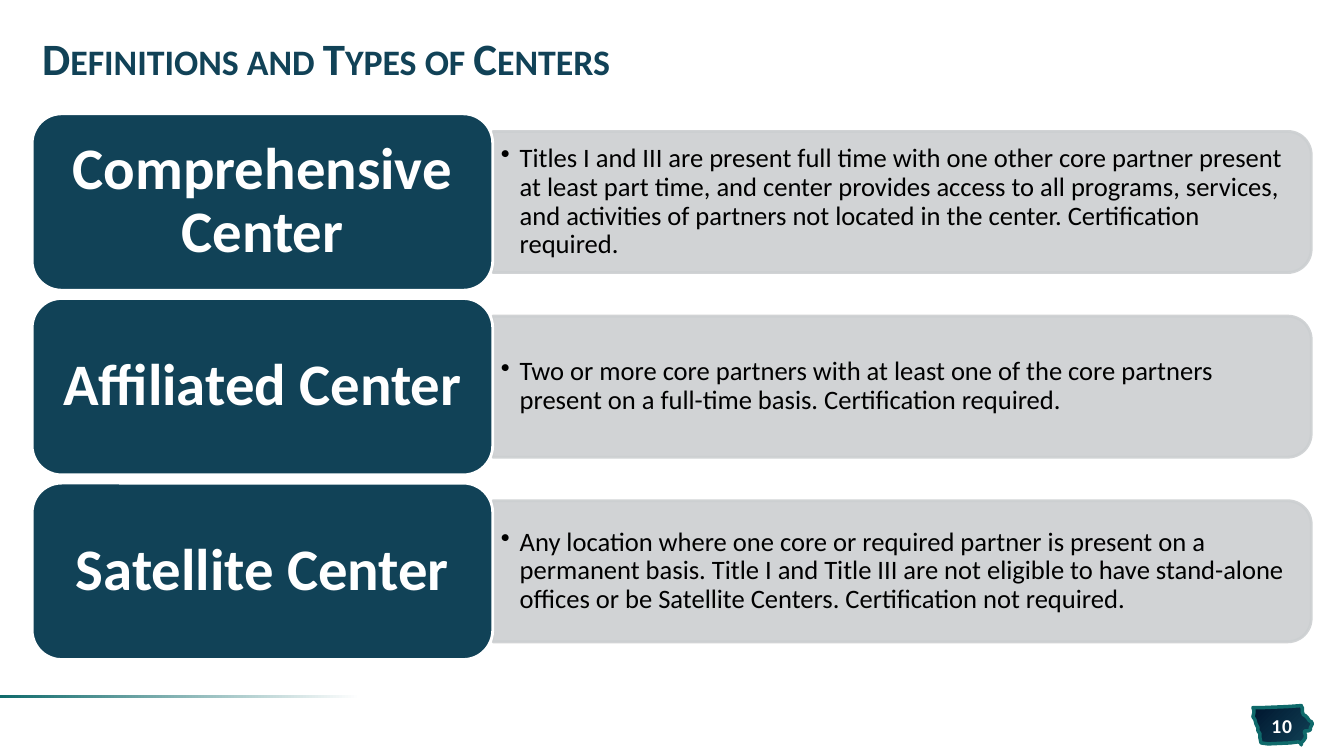
import pptx
import pptx.util
import pptx.dml.color
import pptx.enum.shapes
import pptx.enum.text
import pptx.oxml.ns
import lxml.etree

# Content
HEADING = "Definitions and Types of Centers"
PAGE_NUMBER = "10"
CENTERS = [
    ("Comprehensive Center",
     "Titles I and III are present full time with one other core partner present at least "
     "part time, and center provides access to all programs, services, and activities of "
     "partners not located in the center. Certification required."),
    ("Affiliated Center",
     "Two or more core partners with at least one of the core partners present on a "
     "full-time basis. Certification required."),
    ("Satellite Center",
     "Any location where one core or required partner is present on a permanent basis. "
     "Title I and Title III are not eligible to have stand-alone offices or be Satellite "
     "Centers. Certification not required."),
]
COLORS = {"navy": "114257", "night": "00162E", "teal": "0F6A6B", "gray": "CCCFD1",
          "white": "FFFFFF", "black": "000000"}
FONT = "Calibri"

# State outline, in hundredths of an inch
STATE = [(1291, 700), (1277, 701), (1253, 702), (1243, 702), (1244, 705), (1244, 707),
         (1243, 711), (1245, 714), (1246, 718), (1248, 722), (1248, 725), (1250, 728),
         (1250, 732), (1251, 737), (1258, 737.5), (1280, 737), (1288, 736), (1290, 737),
         (1291, 739), (1291, 737), (1293, 735), (1295, 732), (1295, 729), (1294, 726),
         (1295, 725), (1298, 725), (1300, 724), (1300, 722), (1302, 718), (1301, 716),
         (1299, 715), (1297, 712), (1295, 710), (1293, 709), (1292, 706), (1292, 702),
         (1291, 701)]

# Layout, in points
LEFT, TOP = 23, 81.3
NAME_W, NAME_H, PITCH = 329, 126, 131.9
DETAIL_W, DETAIL_H = 584.6, 100.8

Pt = pptx.util.Pt
KIND = pptx.enum.shapes.MSO_SHAPE
ALIGN = pptx.enum.text.PP_ALIGN
qn = pptx.oxml.ns.qn


def rgb(name):
    return pptx.dml.color.RGBColor.from_string(COLORS[name])


def paint(shape, fill, line=None, width=2):
    shape.shadow.inherit = False
    if isinstance(fill, str):
        shape.fill.solid()
        shape.fill.fore_color.rgb = rgb(fill)
    else:
        angle, stops = fill
        shape.fill.gradient()
        shape.fill.gradient_angle = angle
        for stop, (position, color) in zip(shape.fill.gradient_stops, stops):
            stop.position = position
            stop.color.rgb = rgb(color)
    if line:
        shape.line.color.rgb = rgb(line)
        shape.line.width = Pt(width)
    else:
        shape.line.fill.background()


def write(shape, text, size, color, bold=False, align=ALIGN.LEFT, spacing=1.0,
          insets=(7.2, 3.6), bullet=False):
    frame = shape.text_frame
    frame.word_wrap = True
    frame.vertical_anchor = pptx.enum.text.MSO_ANCHOR.MIDDLE
    frame.margin_left = frame.margin_right = Pt(insets[0])
    frame.margin_top = frame.margin_bottom = Pt(insets[1])
    paragraph = frame.paragraphs[0]
    paragraph.alignment = align
    paragraph.line_spacing = spacing
    if bullet:
        properties = paragraph._p.get_or_add_pPr()
        properties.set("marL", str(Pt(13.5)))
        properties.set("indent", str(-Pt(13.5)))
        lxml.etree.SubElement(properties, qn("a:buChar")).set("char", "•")
    run = paragraph.add_run()
    run.text = text
    run.font.name = FONT
    run.font.size = Pt(size)
    run.font.bold = bold
    run.font.color.rgb = rgb(color)
    return run._r.get_or_add_rPr()


deck = pptx.Presentation()
deck.slide_width, deck.slide_height = Pt(960), Pt(540)
slide = deck.slides.add_slide(deck.slide_layouts[6])
shapes = slide.shapes

# State badge with page number
outline = shapes.build_freeform(*STATE[0], scale=Pt(0.72))
outline.add_line_segments(STATE[1:], close=True)
paint(outline.convert_to_shape(), (315, [(0, "night"), (1, "navy")]), "teal", 2.5)
number = shapes.add_textbox(Pt(897), Pt(510), Pt(37), Pt(16.5))
write(number, PAGE_NUMBER, 14, "white", True, ALIGN.CENTER,
      insets=(0, 3.6)).set("spc", "50")

# Footer rule
rule = shapes.add_shape(KIND.RECTANGLE, Pt(0), Pt(496.5), Pt(273.6), Pt(2.2))
paint(rule, (180, [(0.06, "white"), (1, "teal")]))

# Heading
heading = shapes.add_textbox(Pt(LEFT), Pt(17.3), Pt(913.7), Pt(54))
write(heading, HEADING, 32, "navy", True, spacing=0.85).set("cap", "small")

# One row per type of center
for row, (name, definition) in enumerate(CENTERS):
    top = TOP + row * PITCH
    middle = top + NAME_H / 2
    detail_left = LEFT + NAME_W

    # The panel is turned a quarter so that its round corners face right
    panel = shapes.add_shape(
        KIND.ROUND_2_SAME_RECTANGLE,
        Pt(detail_left + (DETAIL_W - DETAIL_H) / 2), Pt(middle - DETAIL_W / 2),
        Pt(DETAIL_H), Pt(DETAIL_W))
    panel.rotation = 90
    paint(panel, "gray", "gray")
    for tint in panel._element.spPr.iter(qn("a:srgbClr")):
        lxml.etree.SubElement(tint, qn("a:alpha")).set("val", "90000")

    detail = shapes.add_textbox(Pt(detail_left), Pt(middle - 45.4), Pt(580.3), Pt(90.8))
    write(detail, definition, 19, "black", spacing=0.9, insets=(5.76, 2.88), bullet=True)

    tile = shapes.add_shape(KIND.ROUNDED_RECTANGLE, Pt(LEFT), Pt(top), Pt(NAME_W), Pt(NAME_H))
    paint(tile, "navy", "white")
    write(tile, name, 42, "white", True, ALIGN.CENTER, 0.9, (12, 6.3))

deck.save("out.pptx")
